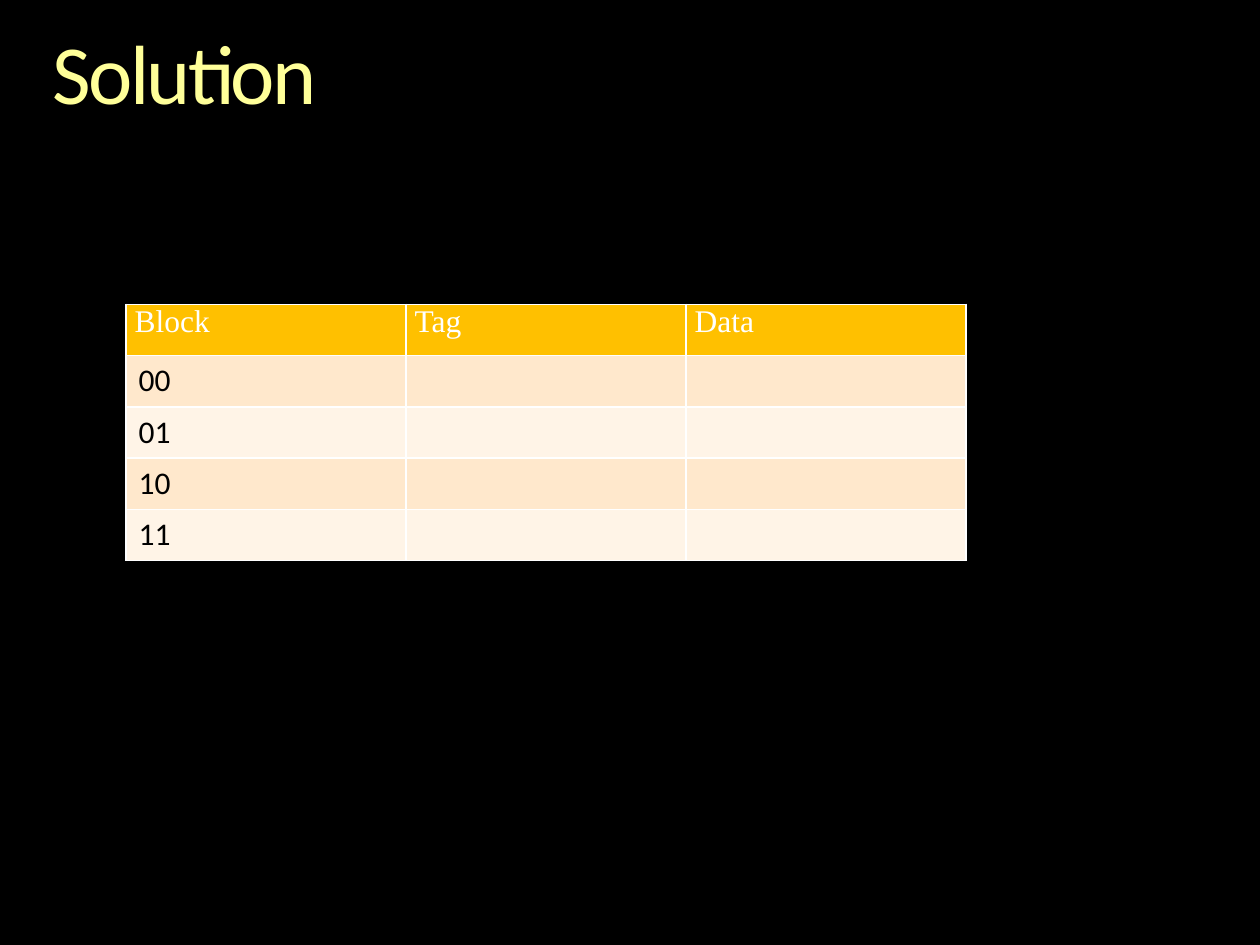
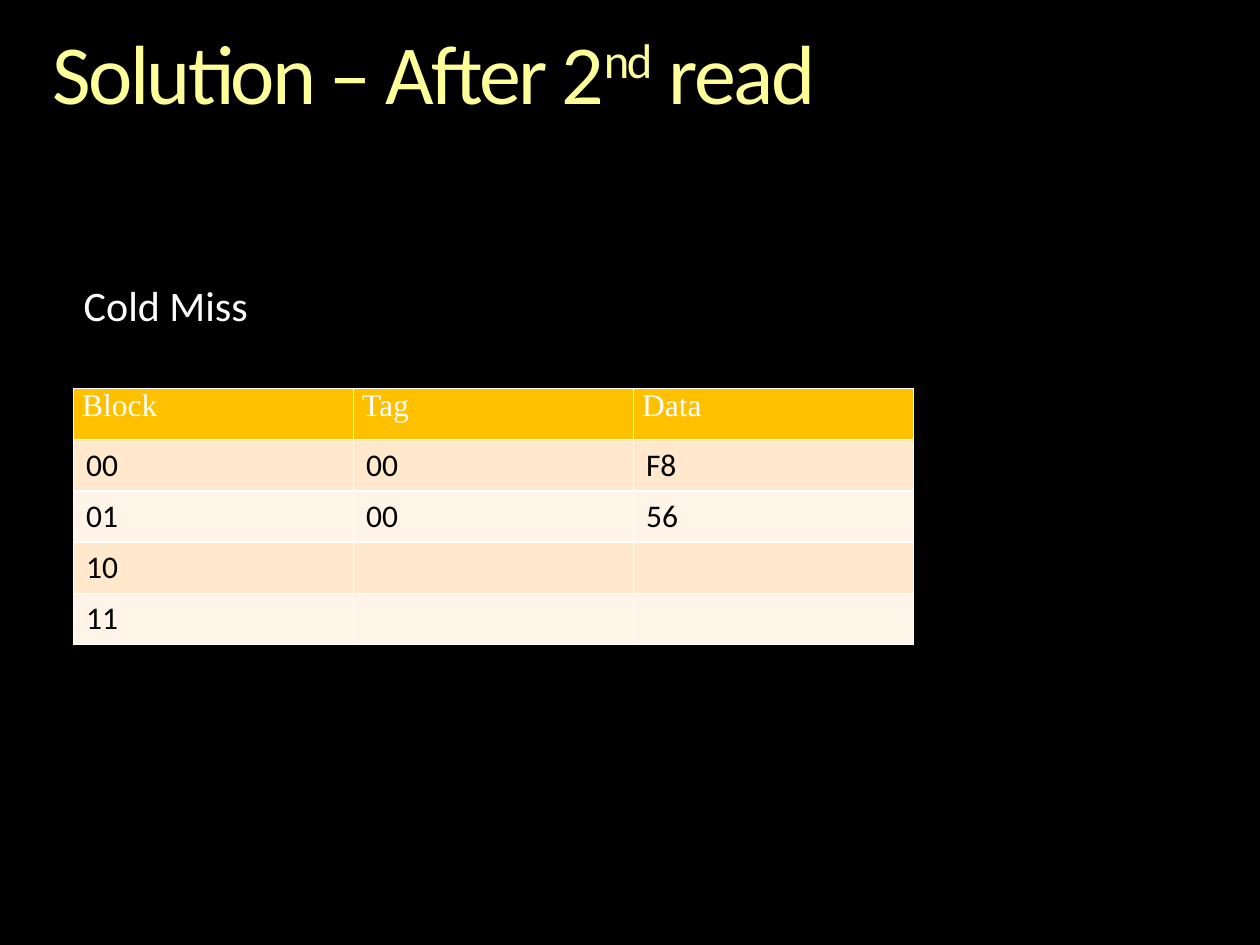
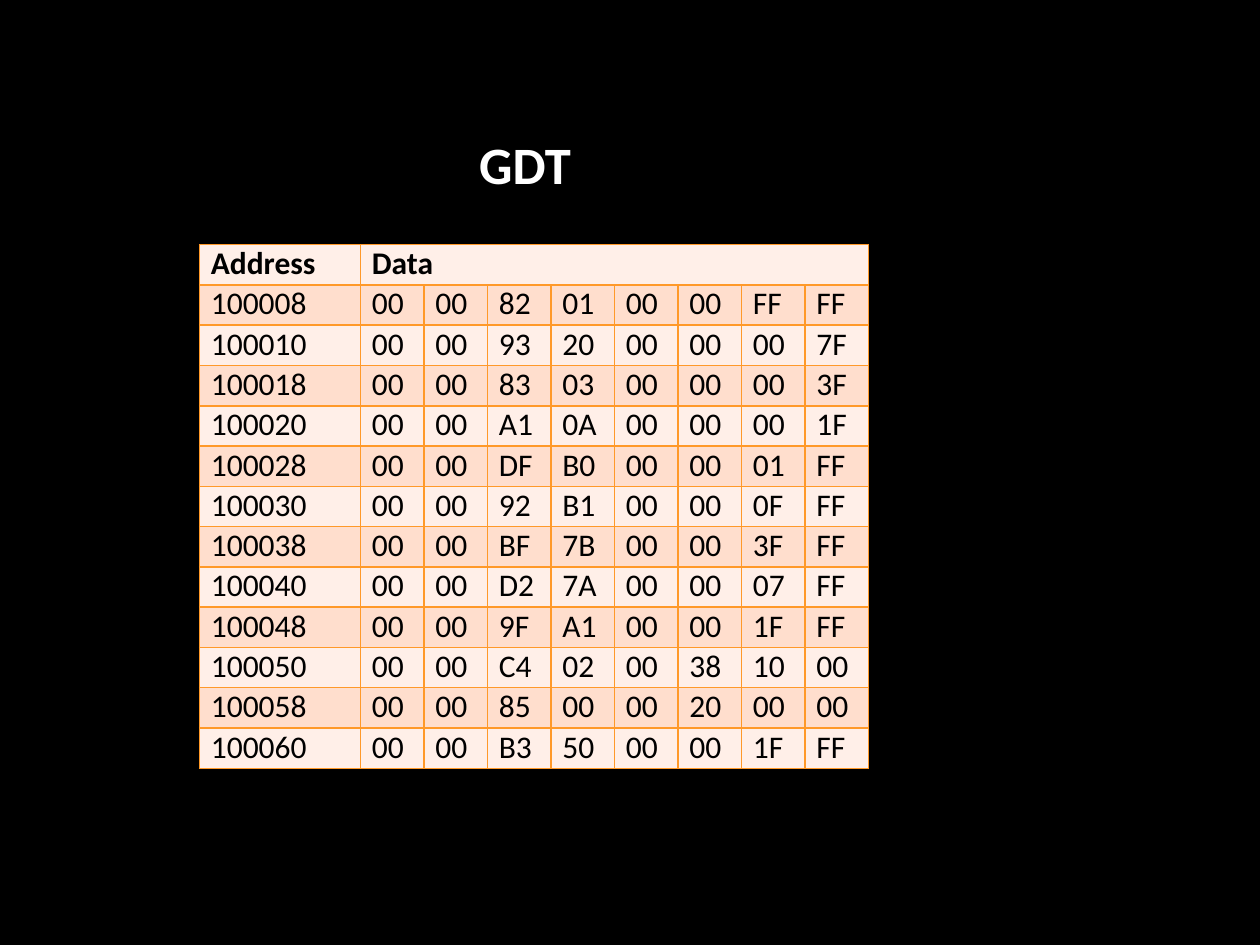
import dataclasses
import pptx
import pptx.dml.color
import pptx.enum.text
import pptx.oxml
import pptx.oxml.ns
import pptx.util

Pt = pptx.util.Pt
RGB = pptx.dml.color.RGBColor.from_string
Align = pptx.enum.text.PP_ALIGN


@dataclasses.dataclass(frozen=True)
class Theme:
    back: str = "000000"
    ink: str = "000000"
    light: str = "FFFFFF"
    title: str = "FFFF99"
    head: str = "FFC000"
    cream: tuple = ("FFE8CC", "FFF4E7")
    peach: tuple = ("FFDECD", "FFEFE8")
    rule: str = "FF9929"
    sans: str = "Calibri"
    serif: str = "Times New Roman"
    big: int = 48
    mid: int = 30
    note: int = 24
    cell: int = 18


theme = Theme()
deck = pptx.Presentation()
deck.slide_width = pptx.util.Inches(10)
deck.slide_height = pptx.util.Inches(7.5)
unit = deck.slide_width / 120  # the slide is a grid of 120 by 90 units


def write(frame, text, size, color, face=theme.sans, bold=False, align=Align.LEFT):
    """Set the text of a frame and format its runs."""
    frame.text = text
    frame.word_wrap = True
    par = frame.paragraphs[0]
    par.alignment = align
    for run in par.runs:
        run.font.size = Pt(size)
        run.font.name = face
        run.font.bold = bold
        run.font.color.rgb = RGB(color)
    return par


def grid(slide, left, top, cols, high, rows, fills, line):
    """Add a plain table with ruled cells; fills holds one colour per row."""
    sides = [round(n * unit) for n in (left, top, sum(cols), high * len(rows))]
    table = slide.shapes.add_table(len(rows), len(cols), *sides).table
    table.horz_banding = table.first_row = False
    for col, wide in zip(table.columns, cols):
        col.width = round(wide * unit)
    for row, fill in zip(table.rows, fills):
        row.height = round(high * unit)
        for cell in row.cells:
            cell.fill.solid()
            cell.fill.fore_color.rgb = RGB(fill)
            props = cell._tc.get_or_add_tcPr()
            for spot, side in enumerate("LRTB"):
                props.insert(spot, pptx.oxml.parse_xml(
                    f'<a:ln{side} {pptx.oxml.ns.nsdecls("a")} w="{Pt(1)}">'
                    f'<a:solidFill><a:srgbClr val="{line}"/></a:solidFill></a:ln{side}>'))
    return table


slides = []
for _ in range(3):
    slide = deck.slides.add_slide(deck.slide_layouts[6])
    slide.background.fill.solid()
    slide.background.fill.fore_color.rgb = RGB(theme.back)
    slides.append(slide)

# Cache slides: title and table of blocks
caches = [
    (slides[0], ["Solution"], 12, 29, {}),
    (slides[1], ["Solution – After 2", "nd", " read"], 7, 37,
     {"00": ["00", "F8"], "01": ["00", "56"]}),
]
for slide, parts, left, top, known in caches:
    box = slide.shapes.add_textbox(*[round(n * unit) for n in (5, 3, 110, 8.8)])
    frame = box.text_frame
    frame.margin_left = frame.margin_right = frame.margin_top = frame.margin_bottom = 0
    par = write(frame, "", theme.big, theme.title)
    par.line_spacing = 0.9
    for part in parts:
        run = par.add_run()
        run.text = part
        run.font.size = Pt(theme.big)
        run.font.name = theme.sans
        run.font.color.rgb = RGB(theme.title)
        mark = run._r.get_or_add_rPr()
        mark.set("spc", "-150")
        if part == "nd":
            mark.set("baseline", "30000")

    rows = [["Block", "Tag", "Data"]]
    rows += [[block] + known.get(block, ["", ""]) for block in ("00", "01", "10", "11")]
    fills = [theme.head, *theme.cream * 2]
    table = grid(slide, left, top, [80 / 3] * 3, 4.88, rows, fills, theme.light)
    for r, row in enumerate(rows):
        for c, text in enumerate(row):
            cell = table.cell(r, c)
            if r == 0:
                cell.margin_left = cell.margin_right = Pt(5)
                cell.margin_top = cell.margin_bottom = 0
                write(cell.text_frame, text, theme.cell, theme.light,
                      theme.serif, align=Align.JUSTIFY)
            elif text:
                write(cell.text_frame, text, theme.cell, theme.ink)

# Captions
captions = [
    (slides[1], "Cold Miss", (6.8, 26, 43, 6), theme.note, False, Align.LEFT),
    (slides[2], "GDT", (37, 12, 26, 7.3), theme.mid, True, Align.CENTER),
]
for slide, text, place, size, bold, align in captions:
    box = slide.shapes.add_textbox(*[round(n * unit) for n in place])
    write(box.text_frame, text, size, theme.light, bold=bold, align=align)

# Descriptor table: eight bytes at each address
dump = """00 00 82 01 00 00 FF FF
00 00 93 20 00 00 00 7F
00 00 83 03 00 00 00 3F
00 00 A1 0A 00 00 00 1F
00 00 DF B0 00 00 01 FF
00 00 92 B1 00 00 0F FF
00 00 BF 7B 00 00 3F FF
00 00 D2 7A 00 00 07 FF
00 00 9F A1 00 00 1F FF
00 00 C4 02 00 38 10 00
00 00 85 00 00 20 00 00
00 00 B3 50 00 00 1F FF"""
rows = [["Address", "Data"]]
for n, line in enumerate(dump.splitlines(), 1):
    rows.append([f"{0x100000 + 8 * n:X}"] + line.split())
fills = [theme.peach[(r + 1) % 2] for r in range(len(rows))]
table = grid(slides[2], 19, 23.3, [15.34] + [6.05] * 8, 3.84, rows, fills, theme.rule)
table.cell(0, 1).merge(table.cell(0, 8))
for r, row in enumerate(rows):
    for c, text in enumerate(row):
        cell = table.cell(r, c)
        cell.margin_left = Pt(6.5)
        cell.margin_right = cell.margin_top = cell.margin_bottom = 0
        write(cell.text_frame, text, theme.cell, theme.ink, bold=r == 0)
for c in range(2, 9):
    cell = table.cell(0, c)
    cell.margin_top = cell.margin_bottom = 0

deck.save("out.pptx")
